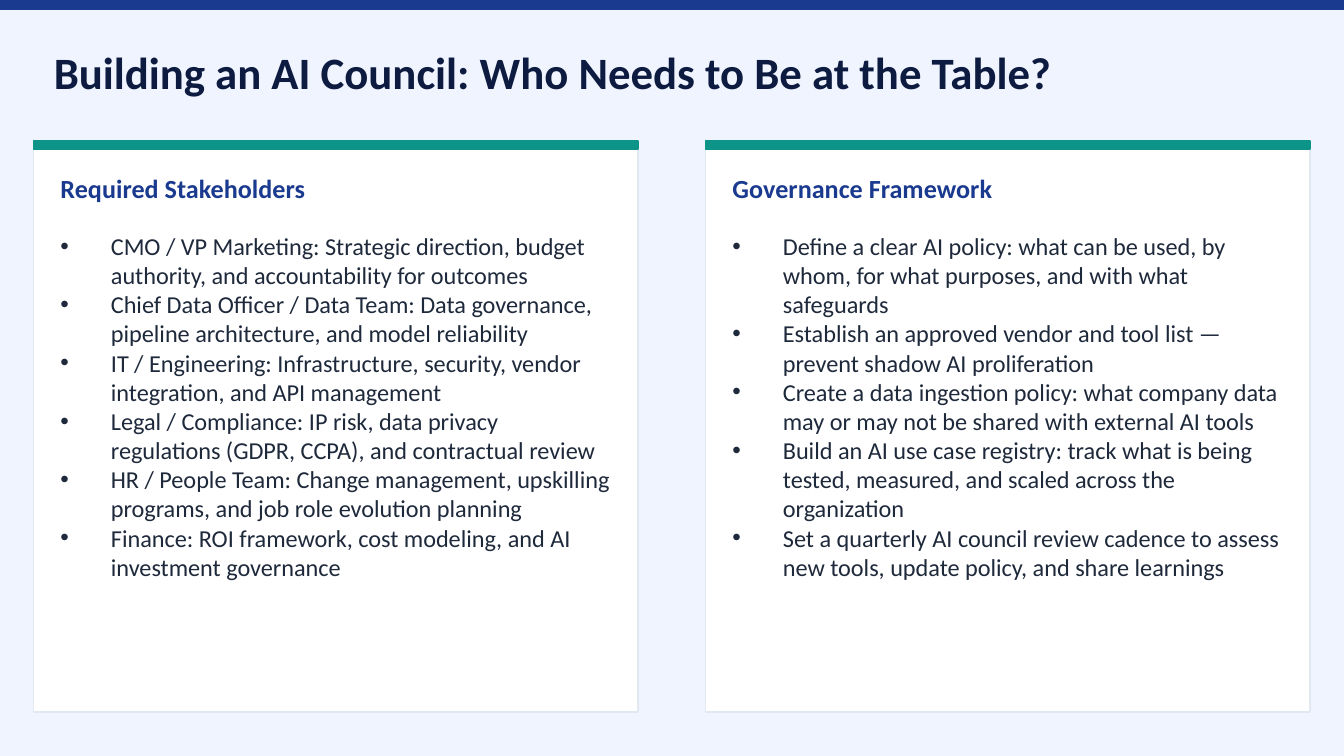
from pptx import Presentation
from pptx.dml.color import RGBColor
from pptx.enum.shapes import MSO_SHAPE as Shape
from pptx.enum.text import MSO_ANCHOR as Anchor, MSO_AUTO_SIZE as Fit, PP_ALIGN as Align
from pptx.util import Pt

PX = 4572  # 200 px to the inch
NAVY, TEAL = "1A3A8F", "0D9488"
INDENT = 75

HEAD = {"size": Pt(14), "bold": True, "color": NAVY}
LIST = {"size": Pt(13), "bold": False, "color": "1E293B"}
TITLE = {"size": Pt(24), "bold": True, "color": "0D1B40"}

cards = [
    ("Required Stakeholders", [
        "CMO / VP Marketing: Strategic direction, budget authority, and accountability for outcomes",
        "Chief Data Officer / Data Team: Data governance, pipeline architecture, and model reliability",
        "IT / Engineering: Infrastructure, security, vendor integration, and API management",
        "Legal / Compliance: IP risk, data privacy regulations (GDPR, CCPA), and contractual review",
        "HR / People Team: Change management, upskilling programs, and job role evolution planning",
        "Finance: ROI framework, cost modeling, and AI investment governance",
    ]),
    ("Governance Framework", [
        "Define a clear AI policy: what can be used, by whom, for what purposes, and with what safeguards",
        "Establish an approved vendor and tool list — prevent shadow AI proliferation",
        "Create a data ingestion policy: what company data may or may not be shared with external AI tools",
        "Build an AI use case registry: track what is being tested, measured, and scaled across the organization",
        "Set a quarterly AI council review cadence to assess new tools, update policy, and share learnings",
    ]),
]


def block(x, y, w, h, fill, line):
    """Draw a filled rectangle with a 1 pt outline."""
    rect = slide.shapes.add_shape(Shape.RECTANGLE, x * PX, y * PX, w * PX, h * PX)
    rect.shadow.inherit = False
    rect.fill.solid()
    rect.fill.fore_color.rgb = RGBColor.from_string(fill)
    rect.line.color.rgb = RGBColor.from_string(line)
    rect.line.width = Pt(1)


def write(slot, x, y, w, h, lines, style, anchor=Anchor.MIDDLE, indent=0):
    """Fill a placeholder, place it and bring it to the front."""
    box = slide.placeholders[slot]
    box.left, box.top, box.width, box.height = x * PX, y * PX, w * PX, h * PX
    tree.append(box._element)
    frame = box.text_frame
    frame.text = "\n".join(lines)
    frame.word_wrap = True
    frame.auto_size = Fit.NONE
    frame.vertical_anchor = anchor
    for side in ("left", "top", "right", "bottom"):
        setattr(frame, f"margin_{side}", 0)
    for para in frame.paragraphs:
        props = para._p.get_or_add_pPr()
        props.set("marL", str(indent * PX))
        props.set("indent", str(-indent * PX))
        para.alignment = Align.LEFT
        para.space_before = Pt(0)
        for run in para.runs:
            run.font.name = "Calibri"
            for key, value in style.items():
                if key == "color":
                    run.font.color.rgb = RGBColor.from_string(value)
                else:
                    setattr(run.font, key, value)


deck = Presentation()
deck.slide_width, deck.slide_height = 2000 * PX, 1125 * PX
slide = deck.slides.add_slide(deck.slide_layouts.get_by_name("Comparison"))
slide.background.fill.solid()
slide.background.fill.fore_color.rgb = RGBColor.from_string("F0F4FF")
tree = slide.shapes._spTree

block(0, 0, 2000, 14, NAVY, NAVY)
write(0, 80, 36, 1840, 140, ["Building an AI Council: Who Needs to Be at the Table?"], TITLE)

for i, (head, items) in enumerate(cards):
    x = 50 + 1000 * i
    block(x, 210, 900, 850, "FFFFFF", "E2E8F0")
    block(x, 210, 900, 12, TEAL, TEAL)
    write(1 + 2 * i, x + 40, 230, 820, 100, [head], HEAD)
    write(2 + 2 * i, x + 40, 344, 820, 680, items, LIST, Anchor.TOP, INDENT)

deck.save("out.pptx")
